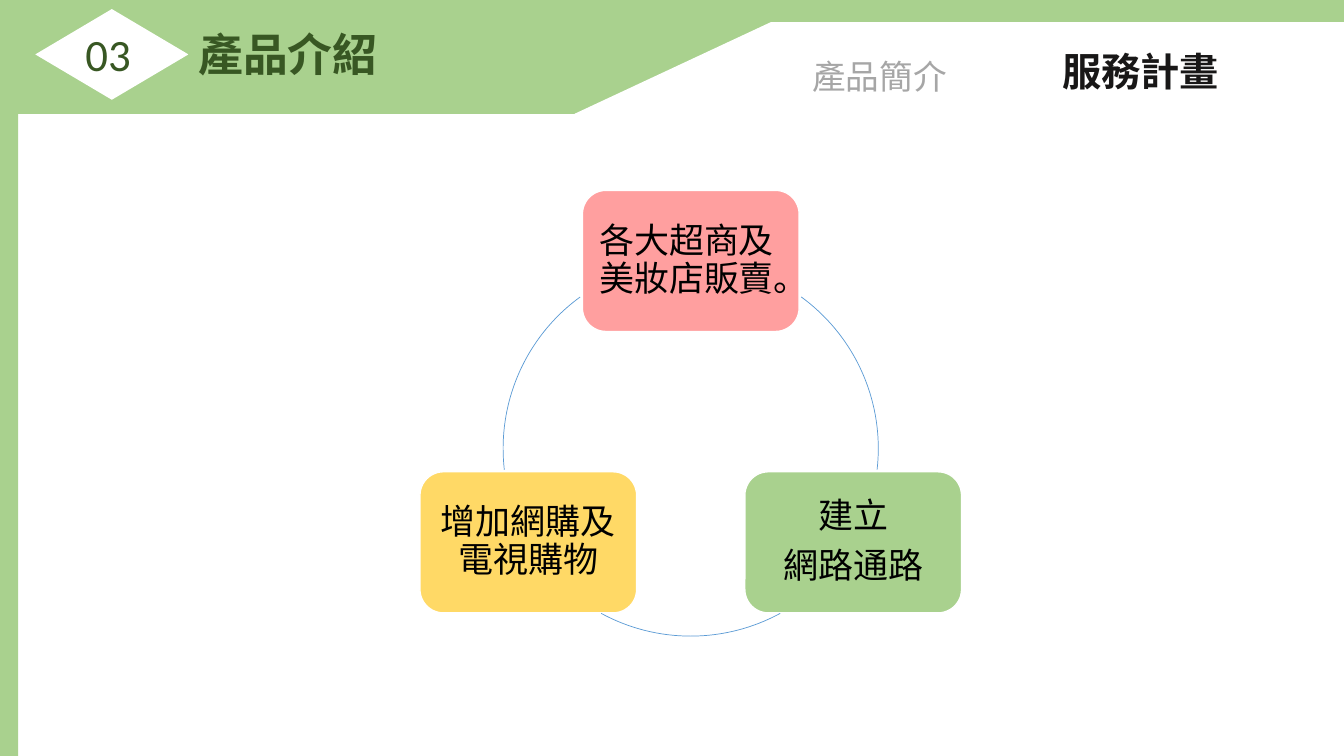
"""Build the product introduction slide with its service plan cycle."""
import math

from pptx import Presentation, util as u
from pptx.dml import color
from pptx.enum import shapes, text

KIND = shapes.MSO_SHAPE


def hue(code):
    return color.RGBColor.from_string(code)


def write(shape, words, size=24, ink="000000", bold=False, align="LEFT", anchor="TOP",
          wrap=True, grow=True, inset=3.6, spacing=None, after=None):
    frame = shape.text_frame
    frame.word_wrap = wrap
    frame.auto_size = getattr(text.MSO_AUTO_SIZE, "SHAPE_TO_FIT_TEXT" if grow else "NONE")
    frame.vertical_anchor = getattr(text.MSO_ANCHOR, anchor)
    frame.margin_top = frame.margin_bottom = u.Pt(inset)
    for index, line in enumerate(words.split("\n")):
        para = frame.add_paragraph() if index else frame.paragraphs[0]
        para.alignment = getattr(text.PP_ALIGN, align)
        if spacing:
            para.line_spacing = spacing
        if after:
            para.space_after = u.Pt(after)
        span = para.add_run()
        span.text = line
        span.font.name = "Calibri"
        span.font.size = u.Pt(size)
        span.font.bold = bold
        span.font.color.rgb = hue(ink)


class Painter:
    green, white, dark, blue = "A9D18E", "FFFFFF", "385723", "5B9BD5"

    def __init__(self, page):
        self.page = page

    def block(self, kind, left, top, width, height, fill=None, line=None, weight=1):
        box = self.page.shapes.add_shape(kind, *map(u.Pt, (left, top, width, height)))
        box.shadow.inherit = False
        if fill:
            box.fill.solid()
            box.fill.fore_color.rgb = hue(fill)
        else:
            box.fill.background()
        if line:
            box.line.color.rgb = hue(line)
            box.line.width = u.Pt(weight)
        else:
            box.line.fill.background()
        return box

    def label(self, words, left, top, width, height, **style):
        box = self.page.shapes.add_textbox(*map(u.Pt, (left, top, width, height)))
        write(box, words, **style)

    def arc(self, center_x, center_y, radius, start, end):
        curve = self.block(KIND.ARC, center_x - radius, center_y - radius,
                           2 * radius, 2 * radius, line=self.blue, weight=0.5)
        for index, degrees in enumerate((start, end)):
            curve.adjustments[index] = degrees * 0.6

    def header(self):
        self.block(KIND.RECTANGLE, 0, 0, 960, 81.4, self.green)
        self.block(KIND.RECTANGLE, 0, 0, 13, 540, self.green)
        self.block(KIND.FLOWCHART_DECISION, 25.2, 6.5, 109.4, 64.8, self.white)
        self.label("03", 54, 15.8, 74.2, 46, size=32, ink=self.dark)
        self.block(KIND.FLOWCHART_DATA, 410.4, 15.8, 701.3, 65.5, self.white)
        title = self.block(KIND.RECTANGLE, 134.6, 15.8, 158.4, 46, self.green)
        write(title, "產品介紹", size=32, ink=self.dark, bold=True)
        self.label("服務計畫", 751.7, 30.2, 127.4, 41, size=28, ink="181717",
                   bold=True, wrap=False)
        self.label("產品簡介", 573.1, 36.7, 127.4, 36, ink="A6A6A6")

    def cycle(self, center_x, center_y, radius, steps, arcs):
        width, height = 154.8, 100.8
        for index, (words, fill, align) in enumerate(steps):
            angle = math.radians(360 / len(steps) * index - 90)
            left = center_x + radius * math.cos(angle) - width / 2
            top = center_y + radius * math.sin(angle) - height / 2
            box = self.block(KIND.ROUNDED_RECTANGLE, left, top, width, height,
                             fill, self.white)
            write(box, words, size=25, align=align, anchor="MIDDLE", grow=False,
                  inset=7.2, spacing=0.9, after=8.75)
        for start, end in arcs:
            self.arc(center_x, center_y, radius, start, end)


def main():
    deck = Presentation()
    deck.slide_width, deck.slide_height = u.Pt(960), u.Pt(540)
    painter = Painter(deck.slides.add_slide(deck.slide_layouts[6]))
    painter.header()
    steps = [
        ("各大超商及 美妝店販賣。", "FF9F9F", "LEFT"),
        ("建立\n網路通路", Painter.green, "CENTER"),
        ("增加網購及電視購物", "FFD966", "CENTER"),
    ]
    arcs = [(306.1, 6.5), (61.5, 118.5), (173.5, 233.9)]
    painter.cycle(493.4, 320.4, 134, steps, arcs)
    deck.save("out.pptx")


if __name__ == "__main__":
    main()
